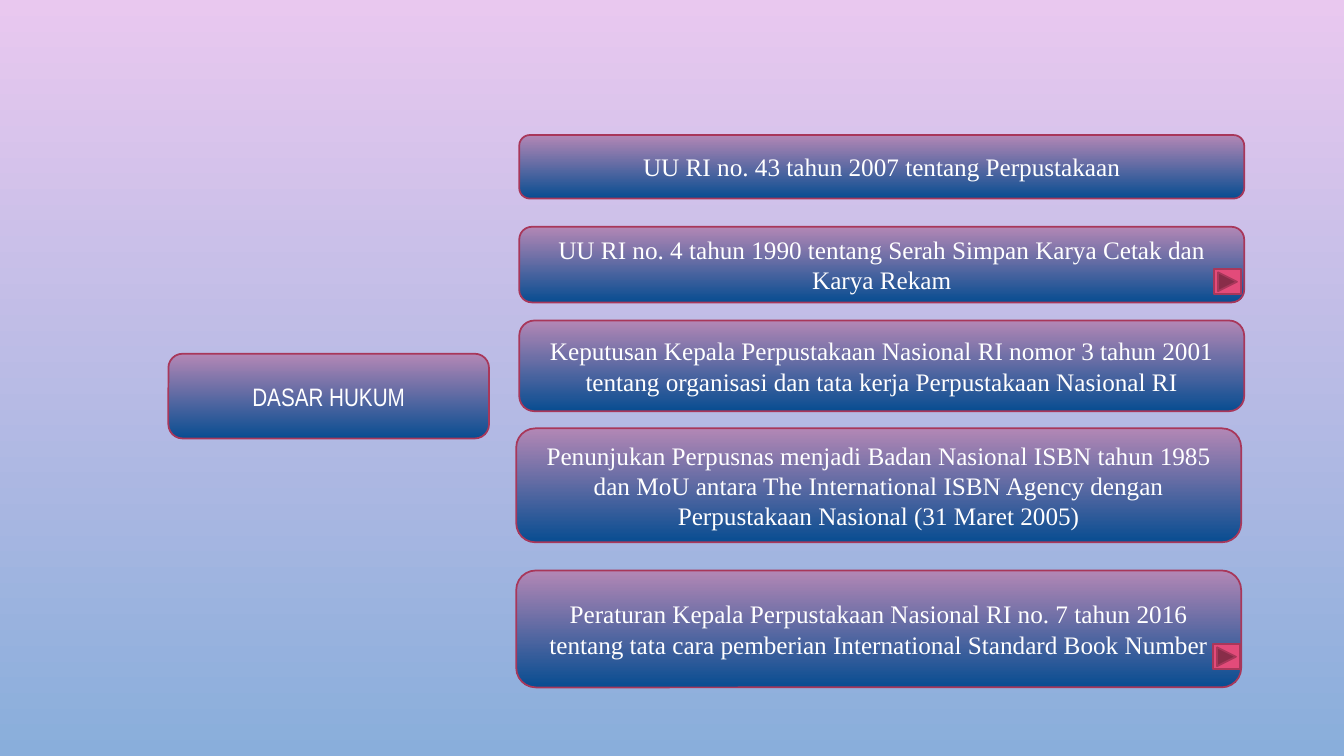
from pptx import Presentation
from pptx.dml.color import RGBColor
from pptx.enum.shapes import MSO_SHAPE as Shape
from pptx.enum.text import MSO_ANCHOR as Anchor, PP_ALIGN as Align
from pptx.util import Inches, Pt

PINK_SKY = RGBColor(0xE9, 0xC8, 0xEF)
BLUE_SKY = RGBColor(0x89, 0xAE, 0xDB)
MAUVE = RGBColor(0xB3, 0x87, 0xB5)
NAVY = RGBColor(0x08, 0x4D, 0x91)
CRIMSON = RGBColor(0xA8, 0x37, 0x5A)
ROSE = RGBColor(0xE3, 0x4B, 0x7A)
WHITE = RGBColor(0xFF, 0xFF, 0xFF)

TOPIC = "DASAR HUKUM"
TOPIC_PLACE = (1.67, 3.51, 3.18, 0.84)

# Left, top, height, wording
LAW_WIDTH = 7.19
LAWS = [
    (5.15, 1.34, 0.63, "UU RI no. 43 tahun 2007 tentang Perpustakaan"),
    (5.15, 2.25, 0.75, "UU RI no. 4 tahun 1990 tentang Serah Simpan Karya Cetak dan "
                       "Karya Rekam"),
    (5.15, 3.18, 0.90, "Keputusan Kepala Perpustakaan Nasional RI nomor 3 tahun 2001 "
                       "tentang organisasi dan tata kerja Perpustakaan Nasional RI"),
    (5.12, 4.25, 1.13, "Penunjukan Perpusnas menjadi Badan Nasional ISBN tahun 1985 "
                       "dan MoU antara The International ISBN Agency dengan "
                       "Perpustakaan Nasional (31 Maret 2005)"),
    (5.12, 5.66, 1.16, "Peraturan Kepala Perpustakaan Nasional RI no. 7 tahun 2016 "
                       "tentang tata cara pemberian International Standard Book Number"),
]

BUTTON_SIZE = (0.27, 0.25)
BUTTON_CORNERS = [(12.04, 2.67), (12.03, 6.39)]


def fade_down(fill, top_color, bottom_color):
    fill.gradient()
    fill.gradient_angle = 270
    for stop, color in zip(fill.gradient_stops, (top_color, bottom_color)):
        stop.color.rgb = color
    fill.gradient_stops[0].position = 0
    fill.gradient_stops[1].position = 1


def add_outlined(slide, preset, place):
    shape = slide.shapes.add_shape(preset, *map(Inches, place))
    shape.shadow.inherit = False
    shape.line.color.rgb = CRIMSON
    shape.line.width = Pt(1.25)
    return shape


def add_panel(slide, place, wording, font_name):
    panel = add_outlined(slide, Shape.ROUNDED_RECTANGLE, place)
    fade_down(panel.fill, MAUVE, NAVY)
    frame = panel.text_frame
    frame.word_wrap = True
    frame.vertical_anchor = Anchor.MIDDLE
    frame.text = wording
    paragraph = frame.paragraphs[0]
    paragraph.alignment = Align.CENTER
    font = paragraph.runs[0].font
    font.name = font_name
    font.size = Pt(18)
    font.color.rgb = WHITE


def main():
    deck = Presentation()
    deck.slide_width, deck.slide_height = Inches(13.33), Inches(7.5)
    slide = deck.slides.add_slide(deck.slide_layouts[6])
    fade_down(slide.background.fill, PINK_SKY, BLUE_SKY)

    add_panel(slide, TOPIC_PLACE, TOPIC, "Arial Narrow")
    for left, top, height, wording in LAWS:
        add_panel(slide, (left, top, LAW_WIDTH, height), wording, "Times New Roman")

    for corner in BUTTON_CORNERS:
        button = add_outlined(slide, Shape.ACTION_BUTTON_FORWARD_OR_NEXT,
                              corner + BUTTON_SIZE)
        button.fill.solid()
        button.fill.fore_color.rgb = ROSE

    deck.save("out.pptx")


if __name__ == "__main__":
    main()
